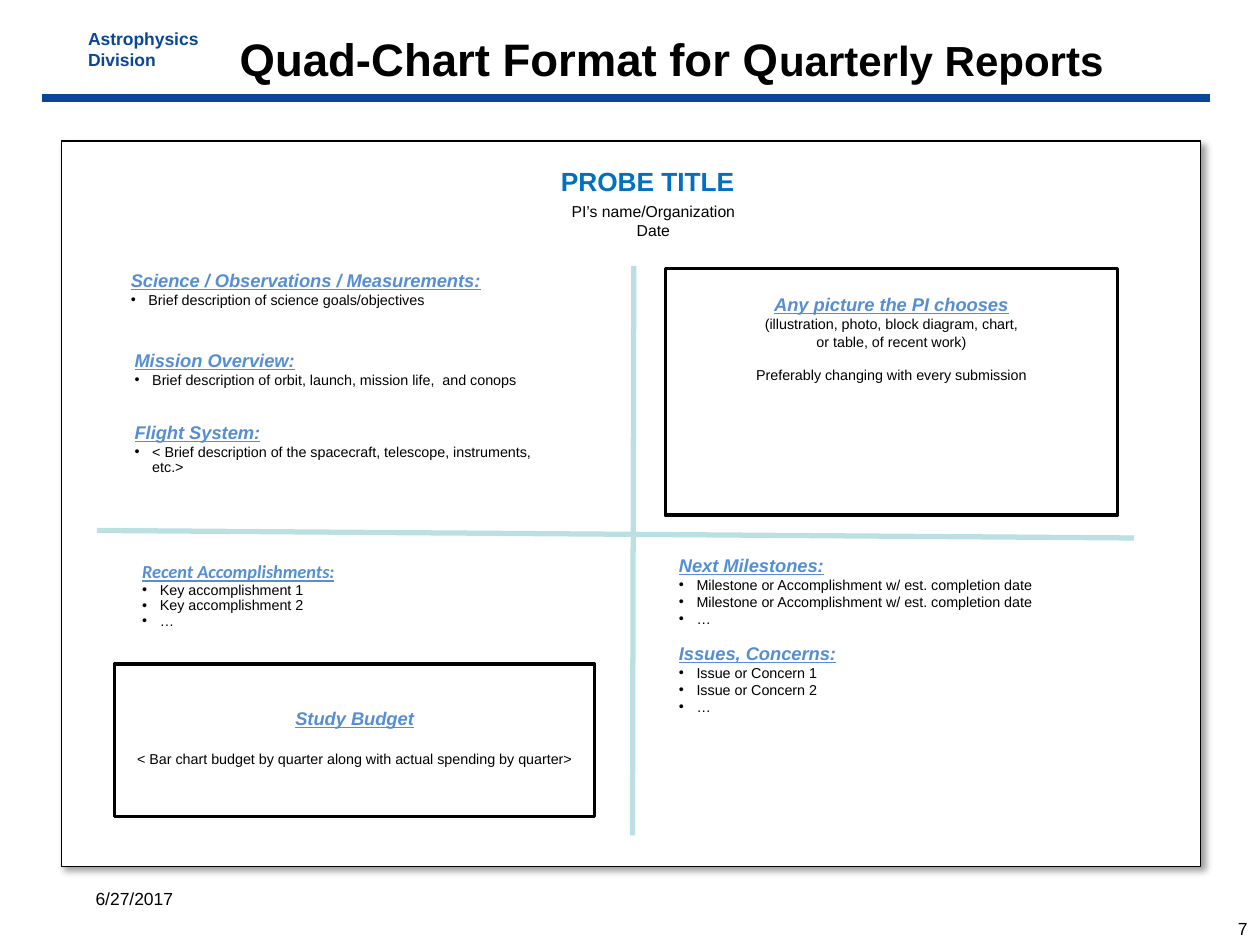
from lxml import etree
from pptx import Presentation
from pptx import util as u
from pptx.dml.color import RGBColor
from pptx.enum import shapes, text
from pptx.oxml.ns import qn

NAVY, TEAL, HEADING, BLACK, WHITE = "0B4599", "BBE0E3", "558ED5", "000000", "FFFFFF"
CENTER, RIGHT = text.PP_ALIGN.CENTER, text.PP_ALIGN.RIGHT
BODY_SIZE = 8.2


def color(value):
    return RGBColor.from_string(value)


def add_child(parent, tag, **attributes):
    return etree.SubElement(parent, qn(tag), {k: str(v) for k, v in attributes.items()})


def set_frame(frame, inset=(0.1, 0.05), top_inset=None, anchor=text.MSO_ANCHOR.TOP):
    side, edge = inset
    frame.word_wrap = True
    frame.vertical_anchor = anchor
    frame.margin_left = frame.margin_right = u.Inches(side)
    frame.margin_top = u.Inches(edge if top_inset is None else top_inset)
    frame.margin_bottom = u.Inches(edge)


def style(font, size, ink=BLACK, bold=False, italic=False, underline=False, name="Arial"):
    font.size = u.Pt(size)
    font.name = name
    font.bold, font.italic, font.underline = bold, italic, underline
    font.color.rgb = color(ink)


def write(frame, words, size=BODY_SIZE, align=None, before=0, spacing=None,
          bullet=False, **font):
    """Fill the frame's empty first paragraph, or add one after the others."""
    first = frame.paragraphs[0]
    para = first if not first.runs else frame.add_paragraph()
    para.alignment = align or text.PP_ALIGN.LEFT
    para.space_before = u.Pt(before)
    if spacing:
        para.line_spacing = spacing
    if bullet:
        properties = para._p.get_or_add_pPr()
        properties.set("marL", str(u.Inches(0.14)))
        properties.set("indent", str(-u.Inches(0.14)))
        add_child(properties, "a:buFont", typeface="Arial")
        add_child(properties, "a:buChar", char="•")
    span = para.add_run()
    span.text = words
    style(span.font, size, **font)
    return para


def write_heading(frame, words, **options):
    write(frame, words, 10.5, ink=HEADING, bold=True, italic=True, underline=True, **options)


def write_section(frame, heading, items, before=0, item_gap=0.8, name="Arial"):
    write_heading(frame, heading, before=before, spacing=0.9, name=name)
    for item in items:
        write(frame, item, before=item_gap, spacing=0.9, bullet=True)


def add_text(slide, left, top, width, height, **frame_options):
    box = slide.shapes.add_textbox(*map(u.Inches, (left, top, width, height)))
    set_frame(box.text_frame, **frame_options)
    return box.text_frame


def add_line(slide, start, end, ink, weight):
    line = slide.shapes.add_connector(shapes.MSO_CONNECTOR.STRAIGHT,
                                      *map(u.Inches, (*start, *end)))
    line.line.color.rgb = color(ink)
    line.line.width = u.Pt(weight)
    add_child(line.element.spPr, "a:effectLst")


def add_box(slide, left, top, width, height, weight, fill=None):
    box = slide.shapes.add_shape(shapes.MSO_SHAPE.RECTANGLE,
                                 *map(u.Inches, (left, top, width, height)))
    box.shadow.inherit = False
    if fill:
        box.fill.solid()
        box.fill.fore_color.rgb = color(fill)
    else:
        box.fill.background()
    box.line.color.rgb = color(BLACK)
    box.line.width = u.Pt(weight)
    return box


def add_shadow(shape, blur, distance, angle, opacity):
    effects = shape.element.spPr.find(qn("a:effectLst"))
    shadow = add_child(effects, "a:outerShdw", blurRad=u.Pt(blur), dist=u.Pt(distance),
                       dir=angle * 60000, algn="tl", rotWithShape=0)
    ink = add_child(shadow, "a:srgbClr", val=BLACK)
    add_child(ink, "a:alpha", val=opacity * 1000)


def add_header(slide):
    division = add_text(slide, 0.6, 0.17, 2.42, 0.43)
    for word in ("Astrophysics", "Division"):
        write(division, word, 10, ink=NAVY, bold=True)
    add_line(slide, (0.33, 0.78), (9.6, 0.78), NAVY, 4.5)
    banner = add_text(slide, 1.04, 0.19, 8.58, 0.54, anchor=text.MSO_ANCHOR.MIDDLE)
    para = write(banner, "Quad-Chart Format for Q", 26, align=CENTER, bold=True)
    span = para.add_run()
    span.text = "uarterly Reports"
    style(span.font, 24, bold=True)


def add_panel(slide):
    panel = add_box(slide, 0.49, 1.12, 9.04, 5.76, 0.75, WHITE)
    add_shadow(panel, blur=4, distance=3, angle=45, opacity=40)
    add_line(slide, (5.03, 2.11), (5.02, 6.63), TEAL, 3)
    add_line(slide, (0.77, 4.21), (9, 4.27), TEAL, 3)


def add_probe_title(slide):
    title = slide.shapes.title
    title.element.getparent().append(title.element)  # bring in front of the panel
    title.left, title.top, title.width, title.height = map(u.Inches, (2.34, 1.27, 5.6, 0.48))
    set_frame(title.text_frame, inset=(0.07, 0.04))
    title.text_frame.auto_size = text.MSO_AUTO_SIZE.NONE
    write(title.text_frame, "PROBE TITLE", 15, align=CENTER, ink="0070C0", bold=True)
    author = add_text(slide, 3.87, 1.55, 2.63, 0.4)
    for words in ("PI’s name/Organization", "Date"):
        write(author, words, 9, align=CENTER)


def add_sections(slide):
    science = add_text(slide, 0.94, 2.11, 3.53, 2.06)
    write_section(science, "Science / Observations / Measurements:",
                  ["Brief description of science goals/objectives"])

    mission = add_text(slide, 0.97, 2.59, 3.53, 1.28, top_inset=0.2)
    write_section(mission, "Mission Overview:",
                  ["Brief description of orbit, launch, mission life,  and conops"])
    write_section(mission, "Flight System:",
                  ["< Brief description of the spacecraft, telescope, instruments, etc.>"],
                  before=20.2)

    recent = add_text(slide, 1.03, 4.42, 3.38, 0.93)
    write_section(recent, "Recent Accomplishments:",
                  ["Key accomplishment 1", "Key accomplishment 2", "…"],
                  item_gap=0, name="Calibri")

    upcoming = add_text(slide, 5.29, 4.37, 3.53, 1.55)
    milestone = "Milestone or Accomplishment w/ est. completion date"
    write_section(upcoming, "Next Milestones:", [milestone, milestone, "…"])
    write_section(upcoming, "Issues, Concerns:",
                  ["Issue or Concern 1", "Issue or Concern 2", "…"], before=10.1)


def add_framed_areas(slide):
    picture = add_box(slide, 5.28, 2.13, 3.59, 1.96, 2).text_frame
    set_frame(picture, top_inset=0.2)
    write_heading(picture, "Any picture the PI chooses", align=CENTER)
    write(picture, "(illustration, photo, block diagram, chart,", align=CENTER)
    write(picture, "or table, of recent work)", align=CENTER)
    write(picture, "Preferably changing with every submission", align=CENTER, before=9.4)

    budget = add_box(slide, 0.91, 5.27, 3.81, 1.21, 2).text_frame
    set_frame(budget, top_inset=0.34)
    write_heading(budget, "Study Budget", align=CENTER)
    write(budget, "< Bar chart budget by quarter along with actual spending by quarter>",
          align=CENTER, before=12)


def add_footer(slide):
    write(add_text(slide, 0.66, 7, 2.08, 0.31), "6/27/2017", 10)
    write(add_text(slide, 9.42, 7.24, 0.58, 0.25), "7", 10, align=RIGHT)


def main():
    deck = Presentation()
    deck.slide_width, deck.slide_height = u.Inches(10), u.Inches(7.5)
    page = deck.slides.add_slide(deck.slide_layouts[5])
    add_header(page)
    add_panel(page)
    add_probe_title(page)
    add_sections(page)
    add_framed_areas(page)
    add_footer(page)
    deck.save("out.pptx")


if __name__ == "__main__":
    main()
